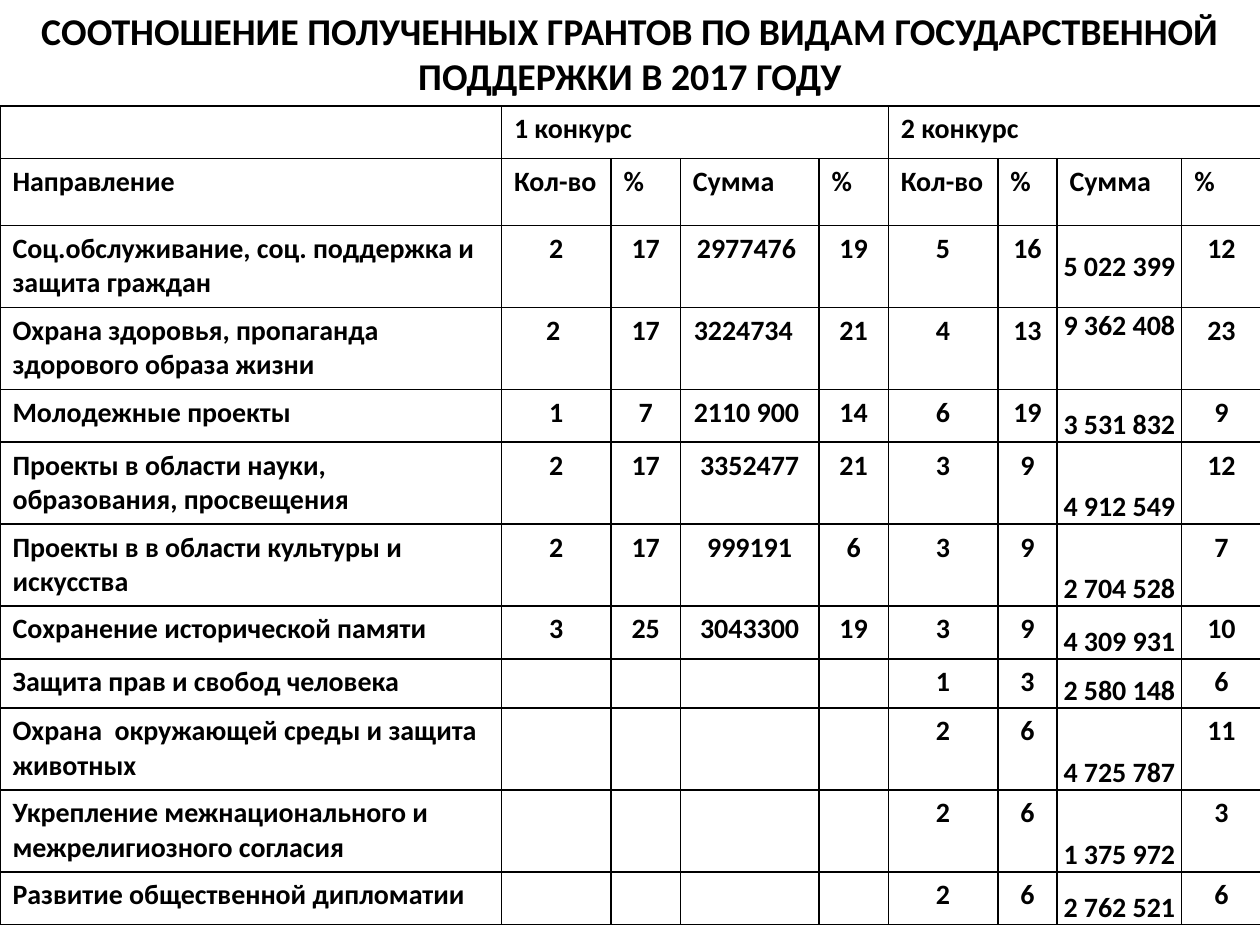
from lxml import etree
from pptx import Presentation
from pptx import util as u
from pptx.dml import color
from pptx.enum import text
from pptx.oxml import ns

INK = "000000"
FONT = "Calibri"
BODY_SIZE = 16
TITLE = "СООТНОШЕНИЕ ПОЛУЧЕННЫХ ГРАНТОВ ПО ВИДАМ ГОСУДАРСТВЕННОЙ ПОДДЕРЖКИ В 2017 ГОДУ"
CONTESTS = {1: "1 конкурс", 5: "2 конкурс"}
MEASURES = ["Кол-во", "%", "Сумма", "%"]
NO_GRANTS = [""] * 4
SECOND_SUM = 7
COLUMN_WIDTHS = [3.98, 0.87, 0.55, 1.1, 0.55, 0.87, 0.47, 0.99, 0.63]
ROW_HEIGHTS = [0.42, 0.53, 0.65, 0.65, 0.42, 0.65, 0.65, 0.42, 0.39, 0.65, 0.65, 0.42]
GRANTS = [
    ["Соц.обслуживание, соц. поддержка и защита граждан",
     "2", "17", "2977476 ", "19", "5", "16", "5 022 399", "12"],
    ["Охрана здоровья, пропаганда здорового образа жизни",
     "2 ", "17", "3224734  ", "21", "4", "13", "9 362 408", "23"],
    ["Молодежные проекты", "1", "7", "2110 900 ", "14", "6", "19", "3 531 832", "9"],
    ["Проекты в области науки, образования, просвещения",
     "2", "17", "3352477", "21", "3", "9", "4 912 549", "12"],
    ["Проекты в в области культуры и искусства",
     "2", "17", "999191", "6", "3", "9", "2 704 528", "7"],
    ["Сохранение исторической памяти", "3", "25", "3043300", "19", "3", "9", "4 309 931", "10"],
    ["Защита прав и свобод человека", *NO_GRANTS, "1", "3", "2 580 148", "6"],
    ["Охрана  окружающей среды и защита животных", *NO_GRANTS, "2", "6", "4 725 787", "11"],
    ["Укрепление межнационального и межрелигиозного согласия",
     *NO_GRANTS, "2", "6", "1 375 972", "3"],
    ["Развитие общественной дипломатии", *NO_GRANTS, "2", "6", "2 762 521", "6"],
]


def rgb(value):
    """Return the colour for a hex string."""
    return color.RGBColor.from_string(value)


def write(paragraph, words, size, align):
    """Add one bold run to a paragraph."""
    paragraph.alignment = align
    run = paragraph.add_run()
    run.text = words
    run.font.name = FONT
    run.font.size = u.Pt(size)
    run.font.bold = True
    run.font.color.rgb = rgb(INK)


def draw_borders(cell):
    """Draw a thin line on each side of a cell."""
    properties = cell._tc.get_or_add_tcPr()
    for position, side in enumerate(("a:lnL", "a:lnR", "a:lnT", "a:lnB")):
        line = etree.Element(ns.qn(side), w=str(u.Pt(1)))
        fill = etree.SubElement(line, ns.qn("a:solidFill"))
        etree.SubElement(fill, ns.qn("a:srgbClr"), val=INK)
        properties.insert(position, line)


def fill_cell(cell, words, align):
    """Give a cell its background, borders and text."""
    cell.fill.background()
    draw_borders(cell)
    paragraph = cell.text_frame.paragraphs[0]
    if words:
        write(paragraph, words, BODY_SIZE, align)
    else:
        paragraph._p.get_or_add_endParaRPr().set("sz", str(BODY_SIZE * 100))


def place_second_sum(cell, anchor):
    """Set the tight margins and the anchor of a second contest sum."""
    cell.margin_left = cell.margin_right = cell.margin_top = u.Inches(0.01)
    cell.margin_bottom = 0
    cell.vertical_anchor = anchor


def add_title(slide):
    """Place and fill the title."""
    title = slide.shapes.title
    title.left, title.top = u.Inches(0), u.Inches(0)
    title.width, title.height = u.Inches(10), u.Inches(0.84)
    frame = title.text_frame
    frame.word_wrap = True
    frame.auto_size = text.MSO_AUTO_SIZE.NONE
    frame.vertical_anchor = text.MSO_ANCHOR.MIDDLE
    write(frame.paragraphs[0], TITLE, 21.6, text.PP_ALIGN.CENTER)


def add_grants_table(slide):
    """Add the table of grants by direction and contest."""
    contests = [CONTESTS.get(column, "") for column in range(len(COLUMN_WIDTHS))]
    rows = [contests, ["Направление", *MEASURES, *MEASURES], *GRANTS]
    frame = slide.shapes.add_table(
        len(rows), len(COLUMN_WIDTHS), u.Inches(0), u.Inches(0.84),
        u.Inches(sum(COLUMN_WIDTHS)), u.Inches(sum(ROW_HEIGHTS)))
    table = frame.table
    table.first_row = table.horz_banding = False
    for column, width in zip(table.columns, COLUMN_WIDTHS):
        column.width = u.Inches(width)
    for row, height in zip(table.rows, ROW_HEIGHTS):
        row.height = u.Inches(height)
    for start in CONTESTS:
        table.cell(0, start).merge(table.cell(0, start + 3))

    anchors = {2: text.MSO_ANCHOR.MIDDLE, 3: text.MSO_ANCHOR.TOP}
    for r, row in enumerate(rows):
        for c, words in enumerate(row):
            is_number = r > 1 and c > 0
            align = text.PP_ALIGN.CENTER if is_number else text.PP_ALIGN.LEFT
            fill_cell(table.cell(r, c), words, align)
        if r > 1:
            place_second_sum(table.cell(r, SECOND_SUM), anchors.get(r, text.MSO_ANCHOR.BOTTOM))


def main():
    """Build and save the slide."""
    deck = Presentation()
    deck.slide_width, deck.slide_height = u.Inches(10), u.Inches(7.5)
    slide = deck.slides.add_slide(deck.slide_layouts[5])
    add_title(slide)
    add_grants_table(slide)
    deck.save("out.pptx")


if __name__ == "__main__":
    main()
